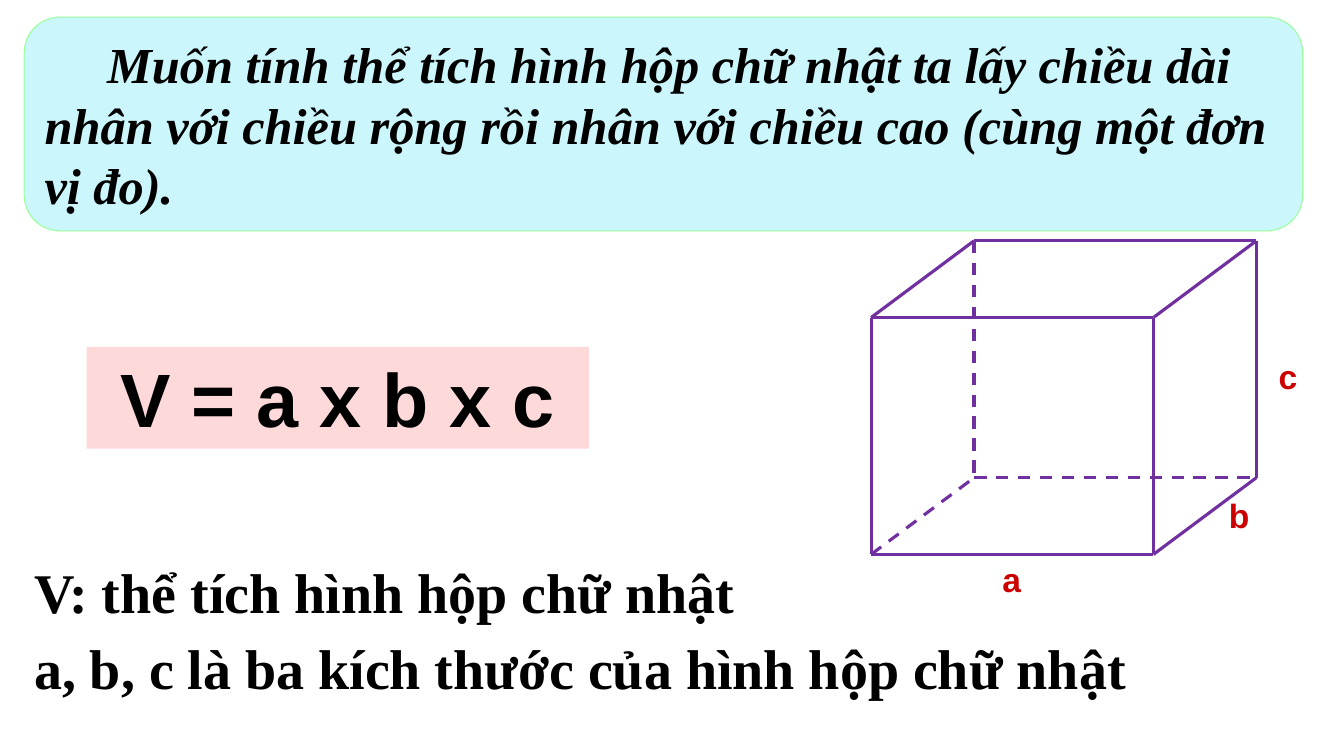
from pptx import Presentation
from pptx.dml.color import RGBColor
from pptx.enum.dml import MSO_LINE as Dash
from pptx.enum.shapes import MSO_CONNECTOR as Conn, MSO_SHAPE as Kind
from pptx.enum.text import MSO_ANCHOR as Anchor, PP_ALIGN as Align
from pptx.oxml.ns import qn
from pptx.util import Inches, Pt
from lxml.etree import SubElement

BLACK = RGBColor(0, 0, 0)
RED = RGBColor(0xCC, 0, 0)
PURPLE = RGBColor(0x70, 0x30, 0xA0)
PINK = RGBColor(0xFE, 0xD9, 0xD9)
CYAN = RGBColor(0xCB, 0xF7, 0xFC)
GREEN = RGBColor(0x99, 0xFF, 0x99)
SERIF, SANS = "Times New Roman", "Arial"

# Content: text and place (left, top, width, height)
RULE = ("Muốn tính thể tích hình hộp chữ nhật ta lấy chiều dài nhân với "
        "chiều rộng rồi nhân với chiều cao (cùng một đơn vị đo).",
        (0.24, 0.17, 12.68, 2.12))
FORMULA = ("V = a x b x c", (0.86, 3.44, 4.98, 1.01))
NOTES = [
    ("V: thể tích hình hộp chữ nhật", (0.24, 5.48, 7.86, 0.77)),
    ("a, b, c là ba kích thước của hình hộp chữ nhật", (0.24, 6.24, 11.2, 0.77)),
]
LABELS = [
    ("a", (9.74, 5.5, 0.59, 0.46)),
    ("b", (11.98, 4.86, 0.62, 0.46)),
    ("c", (12.48, 3.48, 0.59, 0.46)),
]

# Box: front top left corner, width, height and depth offset
LEFT, TOP = 8.64, 3.15
WIDE, HIGH = 2.8, 2.35
DEEP = (1.02, -0.76)

deck = Presentation()
deck.slide_width, deck.slide_height = Inches(13.33), Inches(7.5)
slide = deck.slides.add_slide(deck.slide_layouts[6])
shapes = slide.shapes


def write(shape, text, font, size, color=BLACK, align=Align.LEFT):
    para = shape.text_frame.paragraphs[0]
    para.text = text
    para.alignment = align
    para.font.name, para.font.size = font, Pt(size)
    para.font.bold = True
    para.font.color.rgb = color
    return para


def panel(kind, place, fill):
    shape = shapes.add_shape(kind, *map(Inches, place))
    shape.shadow.inherit = False
    shape.fill.solid()
    shape.fill.fore_color.rgb = fill
    shape.line.fill.background()
    shape.text_frame.vertical_anchor = Anchor.MIDDLE
    return shape


def edge(start, end, hidden):
    line = shapes.add_connector(Conn.STRAIGHT, *map(Inches, start + end))
    line.line.color.rgb = PURPLE
    line.line.width = Pt(2.25)
    if hidden:
        line.line.dash_style = Dash.DASH
    SubElement(line._element.spPr, qn("a:effectLst"))


def corner(x, y, z):
    return (LEFT + x * WIDE + z * DEEP[0], TOP + y * HIGH + z * DEEP[1])


# Box edges: from each corner along each axis; those at the back
# bottom left corner are hidden
BACK = (0, 1, 1)
for axis in range(3):
    for i in (0, 1):
        for j in (0, 1):
            ends = [[i, j], [i, j]]
            for step in (0, 1):
                ends[step].insert(axis, step)
            edge(*(corner(*end) for end in ends), hidden=list(BACK) in ends)

# Edge labels
for text, place in LABELS:
    box = shapes.add_textbox(*map(Inches, place))
    box.text_frame.word_wrap = False
    write(box, text, SANS, 24, RED, Align.CENTER)

# Notes on the symbols
for text, place in NOTES:
    box = shapes.add_textbox(*map(Inches, place))
    box.text_frame.word_wrap = True
    write(box, text, SERIF, 40)

# Formula
text, place = FORMULA
write(panel(Kind.RECTANGLE, place, PINK), text, SANS, 54, align=Align.CENTER)

# Rule with an indented first line
text, place = RULE
card = panel(Kind.ROUNDED_RECTANGLE, place, CYAN)
card.line.color.rgb = GREEN
card.line.width = Pt(0.75)
para = write(card, text, SERIF, 36)
para.font.italic = True
para._p.get_or_add_pPr().set("indent", str(Inches(0.62)))

deck.save("out.pptx")
